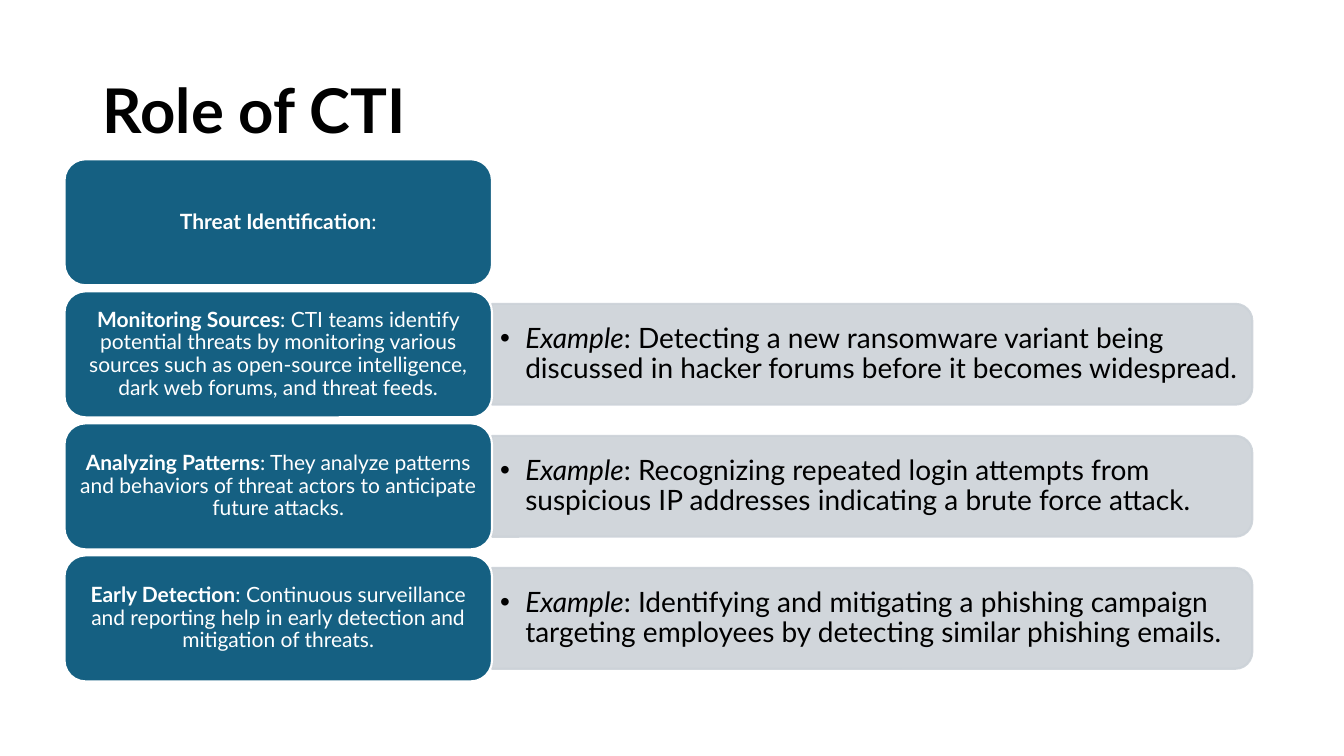
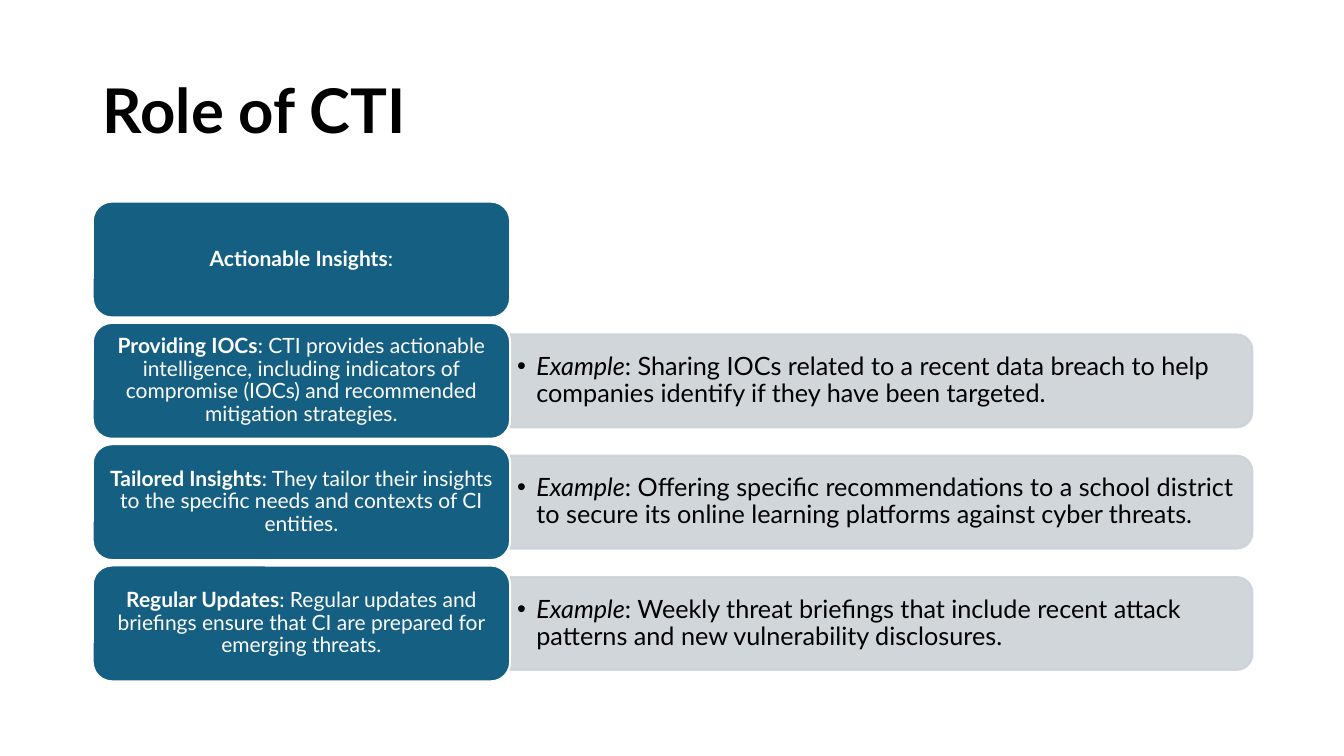
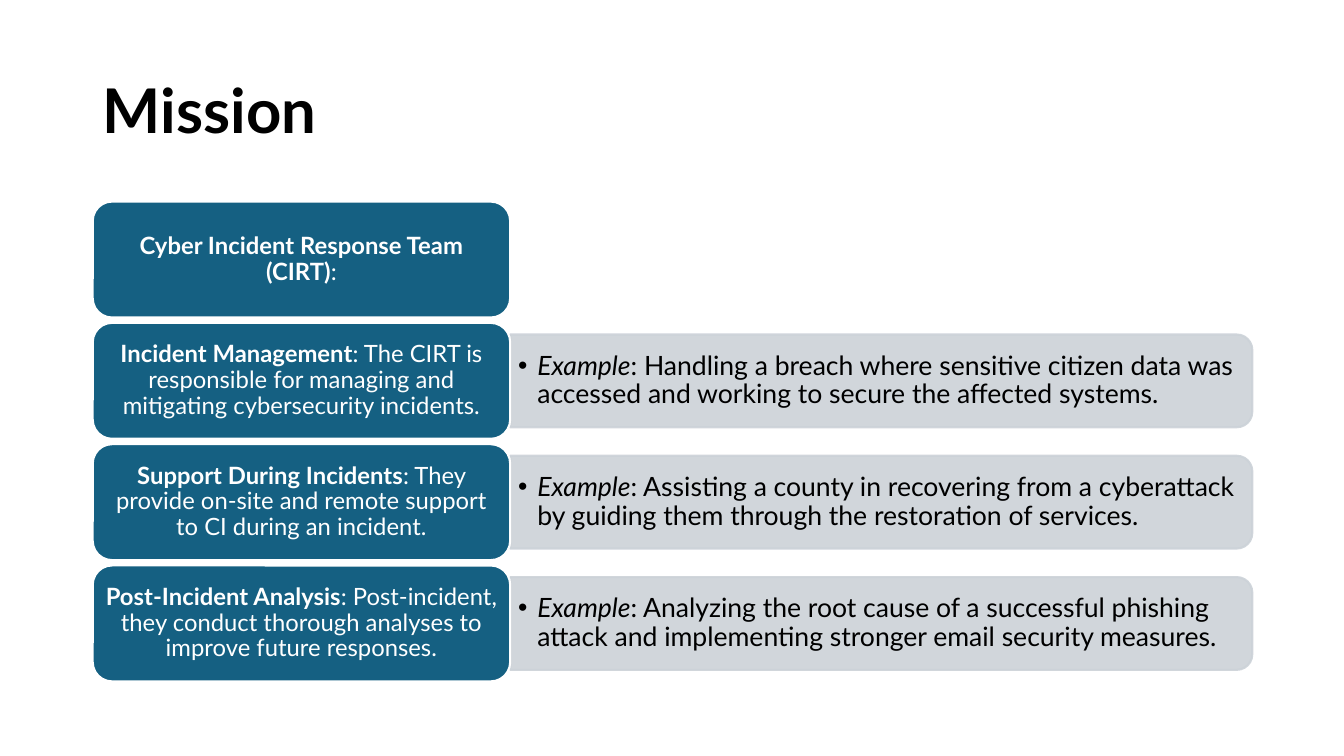
from lxml.etree import SubElement
from pptx import Presentation
from pptx.dml.color import RGBColor
from pptx.enum.shapes import MSO_SHAPE
from pptx.enum.text import MSO_ANCHOR, MSO_AUTO_SIZE, PP_ALIGN
from pptx.oxml.ns import qn
from pptx.util import Inches, Pt

HUES = {"card": "156082", "bar": "CCD2D8", "white": "FFFFFF", "black": "000000"}
FONT = "Lato"
RIGHT, BASE = 12.42, 6.76  # right edge of the bars, bottom of the last card


def write(frame, lead, rest="", size=15, hue="black", align=PP_ALIGN.LEFT,
          style="bold", pad=(0.1, 0.05), hang=0):
    """Fill a frame with a styled lead run and a plain run after it."""
    frame.word_wrap = True
    frame.auto_size = MSO_AUTO_SIZE.NONE
    frame.vertical_anchor = MSO_ANCHOR.MIDDLE
    frame.margin_left = frame.margin_right = Inches(pad[0])
    frame.margin_top = frame.margin_bottom = Inches(pad[1])
    para = frame.paragraphs[0]
    if hang:
        props = para._p.get_or_add_pPr()
        props.set("marL", str(Inches(hang)))
        props.set("indent", str(-Inches(hang)))
        SubElement(props, qn("a:buFont")).set("typeface", "Arial")
        SubElement(props, qn("a:buChar")).set("char", "•")
    para.alignment = align
    para.line_spacing = 0.9
    for text, on in ((lead, True), (rest, False)):
        if text:
            run = para.add_run()
            run.text = text
            run.font.name = FONT
            run.font.size = Pt(size)
            run.font.color.rgb = RGBColor.from_string(HUES[hue])
            setattr(run.font, style, on)


def paint(shape, fill, line, alpha=100):
    """Give a shape its fill and outline, without a shadow."""
    shape.shadow.inherit = False
    shape.fill.solid()
    shape.fill.fore_color.rgb = RGBColor.from_string(HUES[fill])
    shape.line.color.rgb = RGBColor.from_string(HUES[line])
    shape.line.width = Pt(1.5)
    if alpha < 100:
        for tone in shape._element.spPr.iter(qn("a:srgbClr")):
            SubElement(tone, qn("a:alpha")).set("val", str(alpha * 1000))


# Card grids: left, top, width and height of the first card
TALL = (0.64, 1.58, 4.24, 1.25)
SHORT = (0.92, 2, 4.14, 1.15)

# Each row: lead, rest of the card, example
SLIDES = [
    dict(title="Role of CTI", grid=TALL, card=15, note=20, hang=0.25,
         pad=(0.06, 0.03), inset=(0.08, 0.04), rows=[
             ("Threat Identification", ":", ""),
             ("Monitoring Sources",
              ": CTI teams identify potential threats by monitoring various sources "
              "such as open-source intelligence, dark web forums, and threat feeds.",
              ": Detecting a new ransomware variant being discussed in hacker forums "
              "before it becomes widespread."),
             ("Analyzing Patterns",
              ": They analyze patterns and behaviors of threat actors to anticipate "
              "future attacks.",
              ": Recognizing repeated login attempts from suspicious IP addresses "
              "indicating a brute force attack."),
             ("Early Detection",
              ": Continuous surveillance and reporting help in early detection and "
              "mitigation of threats.",
              ": Identifying and mitigating a phishing campaign targeting employees "
              "by detecting similar phishing emails."),
         ]),
    dict(title="Role of CTI", grid=SHORT, card=15, note=18, hang=0.19,
         pad=(0.06, 0.03), inset=(0.07, 0.04), rows=[
             ("Actionable Insights", ":", ""),
             ("Providing IOCs",
              ": CTI provides actionable intelligence, including indicators of "
              "compromise (IOCs) and recommended mitigation strategies.",
              ": Sharing IOCs related to a recent data breach to help companies "
              "identify if they have been targeted."),
             ("Tailored Insights",
              ": They tailor their insights to the specific needs and contexts of CI "
              "entities.",
              ": Offering specific recommendations to a school district to secure its "
              "online learning platforms against cyber threats."),
             ("Regular Updates",
              ": Regular updates and briefings ensure that CI are prepared for "
              "emerging threats.",
              ": Weekly threat briefings that include recent attack patterns and new "
              "vulnerability disclosures."),
         ]),
    dict(title="Mission", grid=SHORT, card=17, note=19, hang=0.19,
         pad=(0.07, 0.04), inset=(0.08, 0.04), rows=[
             ("Cyber Incident Response Team (CIRT)", ":", ""),
             ("Incident Management",
              ": The CIRT is responsible for managing and mitigating cybersecurity "
              "incidents.",
              ": Handling a breach where sensitive citizen data was accessed and "
              "working to secure the affected systems."),
             ("Support During Incidents",
              ": They provide on-site and remote support to CI during an incident.",
              ": Assisting a county in recovering from a cyberattack by guiding them "
              "through the restoration of services."),
             ("Post-Incident Analysis",
              ": Post-incident, they conduct thorough analyses to improve future "
              "responses.",
              ": Analyzing the root cause of a successful phishing attack and "
              "implementing stronger email security measures."),
         ]),
]

deck = Presentation()
deck.slide_width, deck.slide_height = Inches(13.33), Inches(7.5)
plan = deck.slide_layouts[5]

# Title place, shared through the layout
head = plan.placeholders[0]
head.left, head.top = Inches(0.92), Inches(0.4)
head.width, head.height = Inches(11.5), Inches(1.45)

for page in SLIDES:
    slide = deck.slides.add_slide(plan)
    write(slide.shapes.title.text_frame, page["title"], size=44)

    left, top, wide, high = page["grid"]
    rows = page["rows"]
    step = (BASE - top - high) / (len(rows) - 1)
    edge = left + wide
    span, thick = RIGHT - edge, high * 0.8
    for i, (lead, rest, note) in enumerate(rows):
        y = top + i * step
        mid = y + high / 2

        # Example bar: an upright shape turned on its side
        if note:
            bar = slide.shapes.add_shape(
                MSO_SHAPE.ROUND_2_SAME_RECTANGLE,
                Inches(edge + (span - thick) / 2), Inches(mid - span / 2),
                Inches(thick), Inches(span))
            bar.rotation = 90
            paint(bar, "bar", "bar", alpha=90)
            box = slide.shapes.add_textbox(
                Inches(edge), Inches(mid - thick * 0.45),
                Inches(span - 0.05), Inches(thick * 0.9))
            write(box.text_frame, "Example", note, size=page["note"],
                  style="italic", pad=page["inset"], hang=page["hang"])

        # Card
        card = slide.shapes.add_shape(
            MSO_SHAPE.ROUNDED_RECTANGLE,
            Inches(left), Inches(y), Inches(wide), Inches(high))
        paint(card, "card", "white")
        write(card.text_frame, lead, rest, size=page["card"], hue="white",
              align=PP_ALIGN.CENTER, pad=page["pad"])

deck.save("out.pptx")
